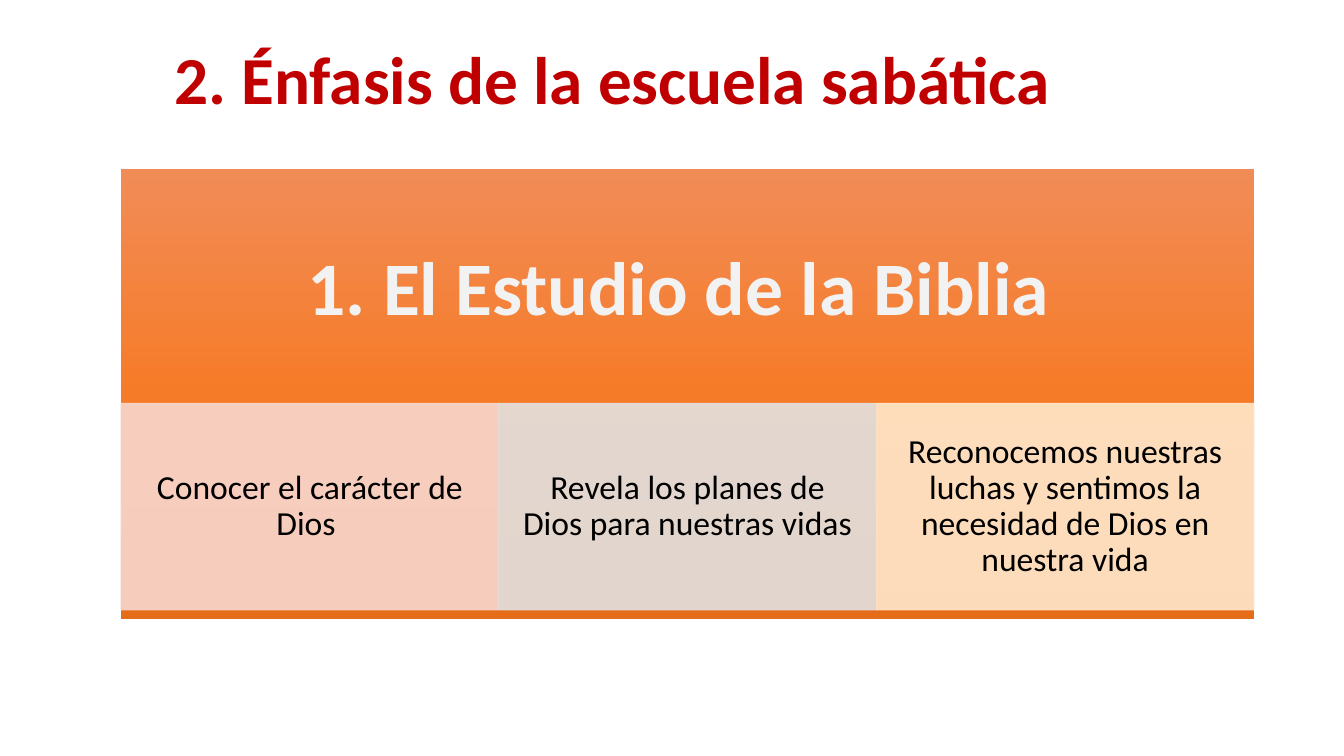
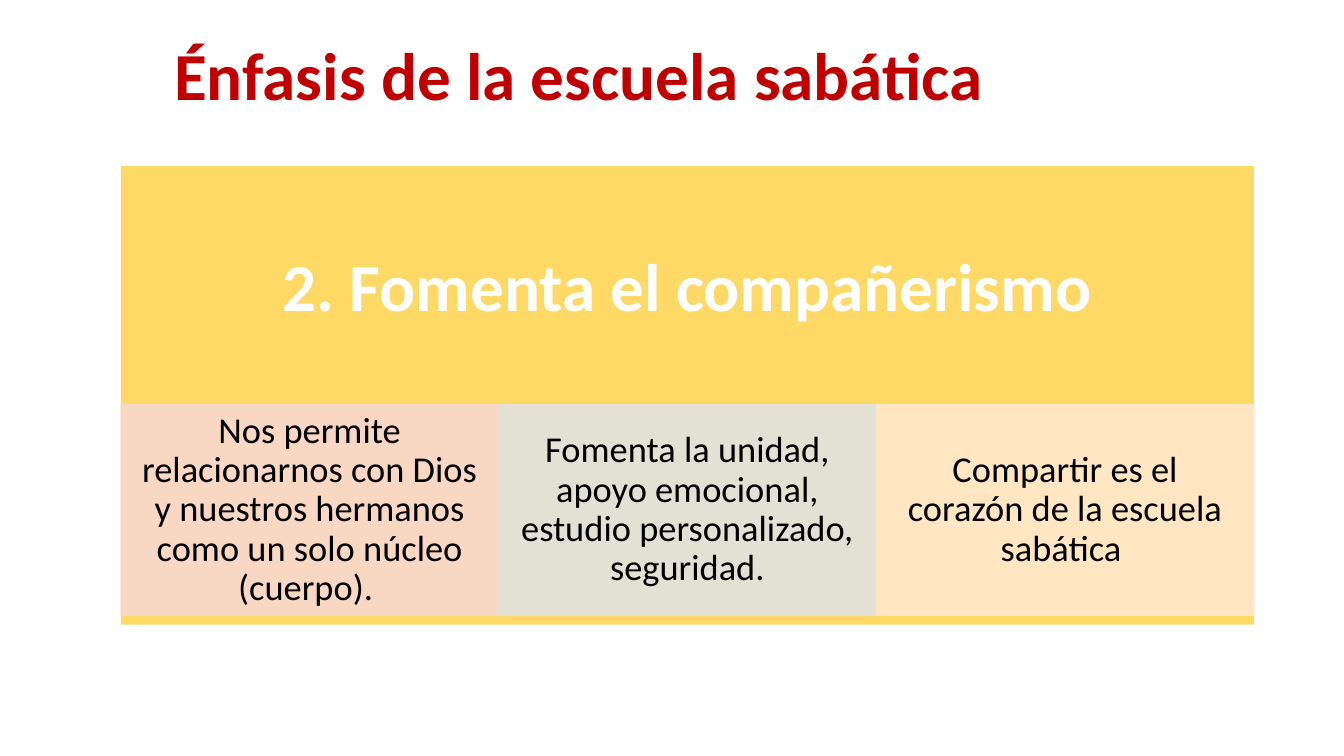
from copy import deepcopy
from dataclasses import dataclass
from typing import Any

from pptx import Presentation
from pptx.dml.color import RGBColor
from pptx.enum.shapes import MSO_SHAPE as Preset
from pptx.enum.text import MSO_ANCHOR as Anchor, MSO_AUTO_SIZE as AutoSize, PP_ALIGN as Align
from pptx.oxml.ns import qn
from pptx.oxml.xmlchemy import OxmlElement
from pptx.util import Pt

FONT = "Calibri"
RED = RGBColor(0xC0, 0x00, 0x00)
BLACK = RGBColor(0x00, 0x00, 0x00)
WHITE = RGBColor(0xFF, 0xFF, 0xFF)
PALE_GREY = RGBColor(0xF2, 0xF2, 0xF2)
YELLOW = RGBColor(0xFF, 0xD9, 0x66)
ORANGES = (
    RGBColor(0xF1, 0x8C, 0x57),
    RGBColor(0xF6, 0x7B, 0x28),
    RGBColor(0xE5, 0x6C, 0x19),
)
CELL_COLORS = (
    RGBColor(0xF8, 0xD7, 0xCE),
    RGBColor(0xE1, 0xE1, 0xE1),
    RGBColor(0xFF, 0xE8, 0xCC),
)
CELL_OPACITY = 90

PANEL_LEFT, PANEL_WIDTH = 86.4, 809.3
CELL_WIDTH = PANEL_WIDTH / len(CELL_COLORS)
# Shares of the panel height
HEADING_SHARE, CELL_TOP_SHARE, CELL_SHARE = 0.54, 0.52, 0.46


@dataclass(frozen=True)
class Emphasis:
    title: str
    title_top: float
    top: float
    height: float
    colors: tuple[RGBColor, ...]
    heading: str
    heading_size: float
    heading_color: RGBColor
    points: tuple[str, ...]
    point_size: float


EMPHASES = (
    Emphasis(
        "2. Énfasis de la escuela sabática", 23, 121, 321.2, ORANGES,
        "1. El Estudio de la Biblia ", 54, PALE_GREY,
        (
            "Conocer el carácter de Dios ",
            "Revela los planes de Dios para nuestras vidas",
            "Reconocemos nuestras luchas y sentimos la necesidad de Dios en nuestra vida",
        ),
        24,
    ),
    Emphasis(
        "Énfasis de la escuela sabática", 20, 118.6, 327.6, (YELLOW,),
        "2. Fomenta el compañerismo", 48, WHITE,
        (
            "Nos permite relacionarnos con Dios y nuestros hermanos como un solo núcleo (cuerpo). ",
            "Fomenta la unidad, apoyo emocional, estudio personalizado, seguridad.",
            "Compartir es el corazón de la escuela sabática ",
        ),
        26,
    ),
)


def apply(target: Any, formats: dict[str, Any]) -> None:
    for name, value in formats.items():
        setattr(target, name, value)


def write(box: Any, text: str, size: float, color: RGBColor, bold: bool = False) -> Any:
    """Put one wrapped paragraph in the box and return the paragraph."""
    box.text_frame.word_wrap = True
    para = box.text_frame.paragraphs[0]
    span = para.add_run()
    span.text = text
    apply(span.font, {"name": FONT, "size": Pt(size), "bold": bold})
    span.font.color.rgb = color
    return para


def write_centred(
    box: Any, text: str, size: float, color: RGBColor,
    side: float, edge: float, bold: bool = False,
) -> None:
    para = write(box, text, size, color, bold)
    apply(para, {"alignment": Align.CENTER, "line_spacing": 0.9})
    apply(box.text_frame, {
        "vertical_anchor": Anchor.MIDDLE,
        "margin_left": Pt(side), "margin_right": Pt(side),
        "margin_top": Pt(edge), "margin_bottom": Pt(edge),
    })


def add_rectangle(page: Any, left: float, top: float, width: float, height: float) -> Any:
    box = page.shapes.add_shape(Preset.RECTANGLE, Pt(left), Pt(top), Pt(width), Pt(height))
    box.shadow.inherit = False
    return box


def fill_downwards(box: Any, colors: tuple[RGBColor, ...]) -> None:
    """Fill with one colour, or with evenly spaced stops from top to bottom."""
    if len(colors) == 1:
        box.fill.solid()
        box.fill.fore_color.rgb = colors[0]
        return
    box.fill.gradient()
    box.fill.gradient_angle = 270
    stop_list = box.element.spPr.find(".//" + qn("a:gsLst"))
    while len(stop_list) < len(colors):
        stop_list.append(deepcopy(stop_list[0]))
    for index, (stop, color) in enumerate(zip(box.fill.gradient_stops, colors)):
        stop.color.rgb = color
        stop.position = index / (len(colors) - 1)


def make_translucent(box: Any, percent: int) -> None:
    for color in box.element.spPr.iter(qn("a:srgbClr")):
        alpha = OxmlElement("a:alpha")
        alpha.set("val", str(percent * 1000))
        color.append(alpha)


def add_title(page: Any, text: str, top: float) -> None:
    box = page.shapes.add_textbox(Pt(117.4), Pt(top), Pt(746.6), Pt(65.5))
    write(box, text, 48, RED, bold=True)
    box.text_frame.auto_size = AutoSize.SHAPE_TO_FIT_TEXT


def add_panel(page: Any, emphasis: Emphasis) -> None:
    panel = add_rectangle(page, PANEL_LEFT, emphasis.top, PANEL_WIDTH, emphasis.height)
    fill_downwards(panel, emphasis.colors)
    panel.line.fill.background()

    heading = page.shapes.add_textbox(
        Pt(PANEL_LEFT), Pt(emphasis.top), Pt(PANEL_WIDTH), Pt(emphasis.height * HEADING_SHARE)
    )
    inset = emphasis.heading_size * 0.55
    write_centred(heading, emphasis.heading, emphasis.heading_size,
                  emphasis.heading_color, inset, inset, bold=True)


def add_cells(page: Any, emphasis: Emphasis) -> None:
    top = emphasis.top + emphasis.height * CELL_TOP_SHARE
    height = emphasis.height * CELL_SHARE
    for column, (text, color) in enumerate(zip(emphasis.points, CELL_COLORS)):
        cell = add_rectangle(page, PANEL_LEFT + column * CELL_WIDTH, top, CELL_WIDTH, height)
        fill_downwards(cell, (color,))
        cell.line.color.rgb = color
        cell.line.width = Pt(0.5)
        make_translucent(cell, CELL_OPACITY)
        write_centred(cell, text, emphasis.point_size, BLACK, side=14, edge=2.5)


def main() -> None:
    deck = Presentation()
    apply(deck, {"slide_width": Pt(960), "slide_height": Pt(540)})
    blank = deck.slide_layouts[6]
    for emphasis in EMPHASES:
        page = deck.slides.add_slide(blank)
        add_title(page, emphasis.title, emphasis.title_top)
        add_panel(page, emphasis)
        add_cells(page, emphasis)
    deck.save("out.pptx")


if __name__ == "__main__":
    main()
